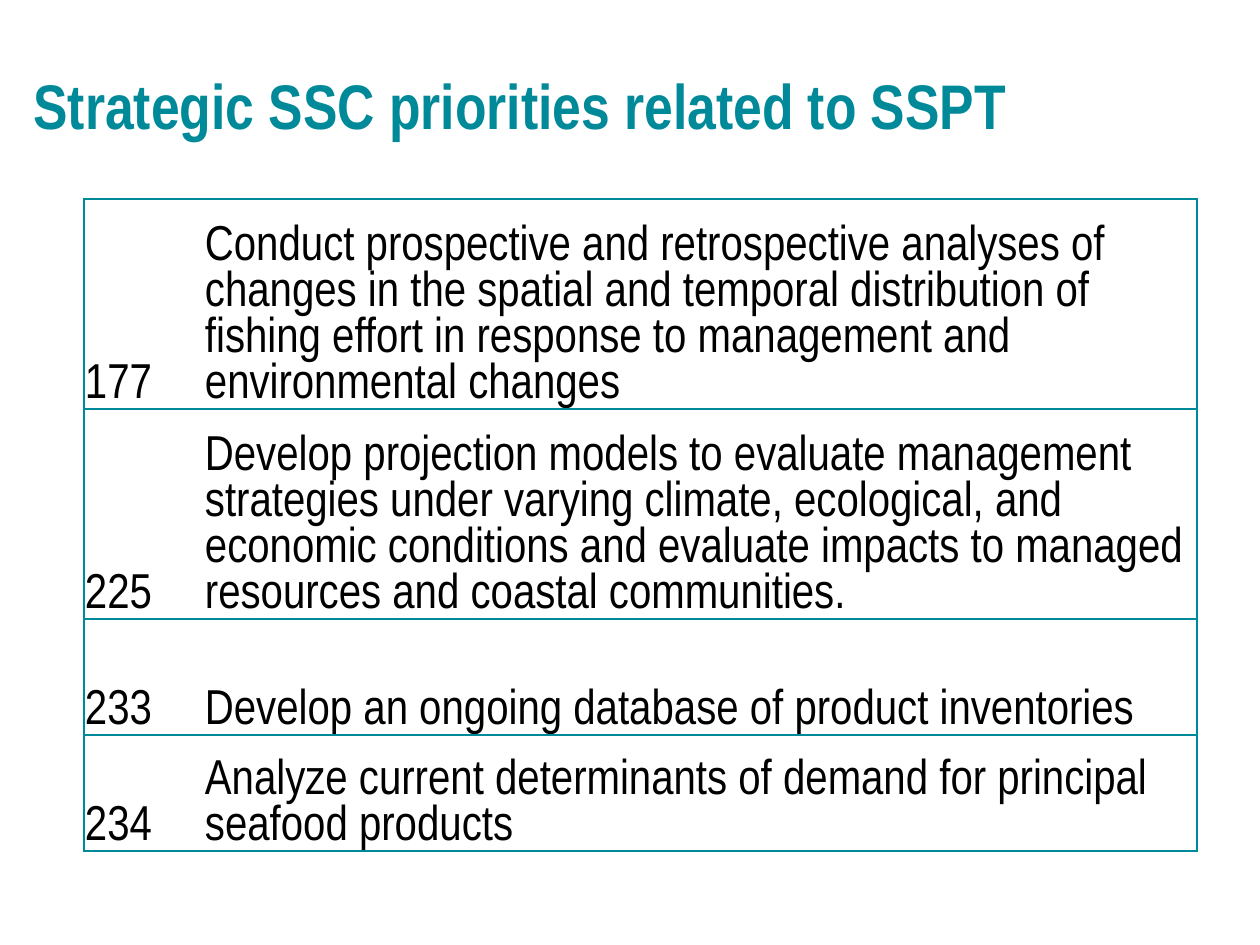
from pptx import Presentation
from pptx.dml.color import RGBColor
from pptx.enum.text import MSO_ANCHOR, PP_ALIGN
from pptx.oxml import parse_xml
from pptx.oxml.ns import nsdecls
from pptx.util import Pt

TITLE = "Strategic SSC priorities related to SSPT"
PRIORITIES = [
    ("177", "Conduct prospective and retrospective analyses of changes in the spatial and "
            "temporal distribution of fishing effort in response to management and "
            "environmental changes"),
    ("225", "Develop projection models to evaluate management strategies under varying "
            "climate, ecological, and economic conditions and evaluate impacts to managed "
            "resources and coastal communities."),
    ("233", "Develop an ongoing database of product inventories"),
    ("234", "Analyze current determinants of demand for principal seafood products"),
]
COLUMN_WIDTHS = [120, 993]
ROW_HEIGHTS = [210, 210, 116, 116]
OUTER_SIDES = ["lnL", "lnR"]
TEAL, BLACK, WHITE = "008998", "000000", "FFFFFF"
FONT = "Arial Narrow"
EMU_PER_PX = 914400 // 126


def px(length):
    return length * EMU_PER_PX


def color(value):
    return RGBColor.from_string(value)


def write(text_frame, text, size, fill, bold=False):
    paragraph = text_frame.paragraphs[0]
    paragraph.alignment = PP_ALIGN.LEFT
    run = paragraph.add_run()
    run.text = text
    run.font.name = FONT
    run.font.size = Pt(size)
    run.font.bold = bold
    run.font.color.rgb = color(fill)


def set_borders(cell, visible_sides):
    """Draw the given sides in teal and hide the others."""
    properties = cell._tc.get_or_add_tcPr()
    for index, side in enumerate(["lnL", "lnR", "lnT", "lnB"]):
        paint = (f'<a:solidFill><a:srgbClr val="{TEAL}"/></a:solidFill>'
                 if side in visible_sides else "<a:noFill/>")
        properties.insert(index, parse_xml(
            f'<a:{side} {nsdecls("a")} w="{Pt(1)}">{paint}</a:{side}>'))


presentation = Presentation()
presentation.slide_width = px(1260)
presentation.slide_height = px(945)
slide = presentation.slides.add_slide(presentation.slide_layouts[5])

title = slide.shapes.title
title.left, title.top, title.width, title.height = map(px, (21, 58, 1187, 93))
title.text_frame.vertical_anchor = MSO_ANCHOR.MIDDLE
write(title.text_frame, TITLE, size=36, fill=TEAL, bold=True)

table = slide.shapes.add_table(
    len(PRIORITIES), len(COLUMN_WIDTHS), px(84), px(199),
    px(sum(COLUMN_WIDTHS)), px(sum(ROW_HEIGHTS))).table
for column, width in zip(table.columns, COLUMN_WIDTHS):
    column.width = px(width)
for row, height, priority in zip(table.rows, ROW_HEIGHTS, PRIORITIES):
    row.height = px(height)
    for cell, text, outer_side in zip(row.cells, priority, OUTER_SIDES):
        cell.margin_left = cell.margin_right = cell.margin_top = px(1)
        cell.margin_bottom = 0
        cell.vertical_anchor = MSO_ANCHOR.BOTTOM
        cell.fill.solid()
        cell.fill.fore_color.rgb = color(WHITE)
        set_borders(cell, [outer_side, "lnT", "lnB"])
        write(cell.text_frame, text, size=28, fill=BLACK)

presentation.save("out.pptx")
